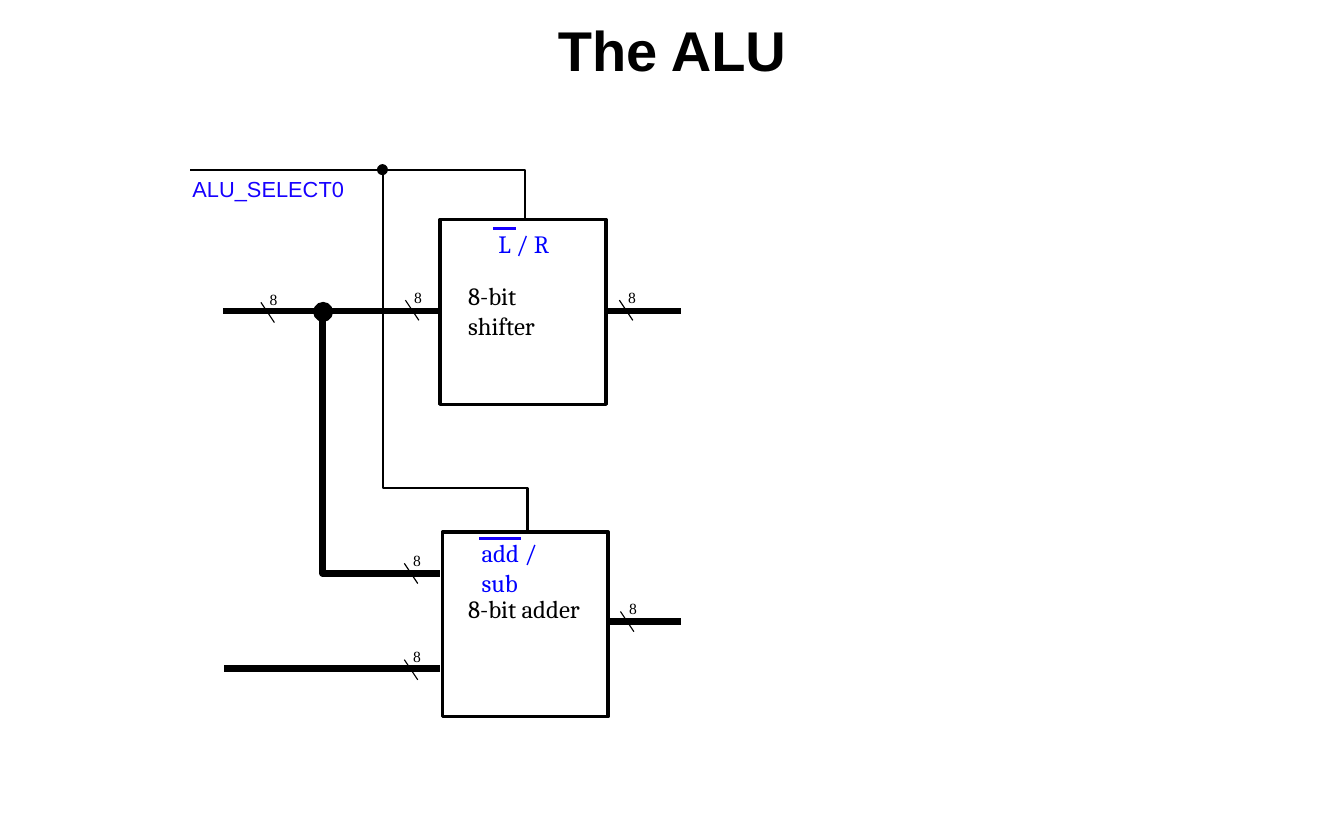
from typing import NamedTuple

from lxml import etree
from pptx import Presentation
from pptx import util as u
from pptx.dml.color import RGBColor
from pptx.enum import shapes, text
from pptx.oxml.ns import qn

BLACK, BLUE, BAR_BLUE = "000000", "0000FF", "1700FF"
Point = tuple[float, float]


class Block(NamedTuple):
    left: float
    top: float
    name: str
    control: str
    control_at: Point
    bar_left: float
    bar_top: float
    bar_width: float


class Wire(NamedTuple):
    points: list[Point]
    weight: float


class Dot(NamedTuple):
    left: float
    top: float
    size: float


BLOCK_W, BLOCK_H = 1.48, 1.65
BLOCKS = [
    Block(3.95, 4.75, "8-bit adder", "add / sub", (4.3, 4.8), 4.28, 4.81, 0.37),
    Block(3.93, 1.96, "8-bit shifter", "L / R", (4.45, 2.04), 4.4, 2.04, 0.21),
]
BUS, SIGNAL = 4, 1.5
WIRES = [
    Wire([(5.43, 5.55), (6.08, 5.55)], BUS),
    Wire([(5.42, 2.78), (6.08, 2.78)], BUS),
    Wire([(2, 5.97), (3.93, 5.97)], BUS),
    Wire([(2.88, 2.78), (2.88, 5.12), (3.93, 5.12)], BUS),
    Wire([(1.99, 2.78), (3.93, 2.78)], BUS),
    Wire([(4.71, 4.74), (4.71, 4.36), (3.42, 4.36), (3.42, 1.52)], SIGNAL),
    Wire([(4.69, 1.96), (4.69, 1.52), (1.7, 1.52)], SIGNAL),
]
BUS_WIDTH_MARKS = [(5.53, 2.68), (2.33, 2.7), (3.61, 5.03),
                   (3.61, 5.89), (3.62, 2.68), (5.54, 5.46)]
DOTS = [Dot(3.38, 1.48, 0.07), Dot(2.81, 2.71, 0.15)]


def rgb(color: str) -> RGBColor:
    return RGBColor.from_string(color)


def set_line(s, color: str, weight: float) -> None:
    s.line.color.rgb = rgb(color)
    s.line.width = u.Pt(weight)


def add_text(sp, at: Point, size: Point, content: str, font: str, points: float,
             color: str = BLACK, inset: Point = (0, 0), wrap: bool = True):
    """Add a one-paragraph text box; inset is (horizontal, vertical)."""
    s = sp.add_textbox(*map(u.Inches, (*at, *size)))
    tf = s.text_frame
    tf.word_wrap = wrap
    tf.vertical_anchor = text.MSO_ANCHOR.TOP
    tf.margin_left = tf.margin_right = u.Inches(inset[0])
    tf.margin_top = tf.margin_bottom = u.Inches(inset[1])
    tf.text = content
    p = tf.paragraphs[0]
    r = p.runs[0]
    r.font.name, r.font.size = font, u.Pt(points)
    r.font.color.rgb = rgb(color)
    return p


def add_line(sp, start: Point, end: Point, color: str, weight: float) -> None:
    s = sp.add_connector(shapes.MSO_CONNECTOR.STRAIGHT,
                         *map(u.Inches, (*start, *end)))
    set_line(s, color, weight)
    etree.SubElement(s._element.spPr, qn("a:effectLst"))


def add_wire(sp, wire: Wire) -> None:
    if len(wire.points) == 2:
        add_line(sp, *wire.points, BLACK, wire.weight)
        return
    first, *rest = [(u.Inches(x), u.Inches(y)) for x, y in wire.points]
    builder = sp.build_freeform(*first)
    builder.add_line_segments(rest, close=False)
    s = builder.convert_to_shape()
    s.shadow.inherit = False
    s.fill.background()
    set_line(s, BLACK, wire.weight)


def add_block(sp, block: Block) -> None:
    s = sp.add_shape(shapes.MSO_SHAPE.RECTANGLE,
                     *map(u.Inches, (block.left, block.top, BLOCK_W, BLOCK_H)))
    s.shadow.inherit = False
    s.fill.background()
    set_line(s, BLACK, 2.25)
    add_text(sp, (4.18, block.top + 0.55), (1.07, 0.27), block.name, "Cambria", 16)
    width = 0.81 if block.control == "add / sub" else 0.6
    add_text(sp, block.control_at, (width, 0.27), block.control, "Cambria", 16, BLUE)
    add_line(sp, (block.bar_left, block.bar_top),
             (block.bar_left + block.bar_width, block.bar_top), BAR_BLUE, 2)


def add_bus_width(sp, at: Point) -> None:
    """Slash a bus and label it with its width in bits."""
    x, y = at
    add_line(sp, at, (x + 0.12, y + 0.18), BLACK, 0.75)
    add_text(sp, (x - 0.02, y - 0.16), (0.27, 0.27), "8", "Times New Roman", 10,
             inset=(0.1, 0.05), wrap=False)


def add_dot(sp, dot: Dot) -> None:
    s = sp.add_shape(shapes.MSO_SHAPE.OVAL,
                     *map(u.Inches, (dot.left, dot.top, dot.size, dot.size)))
    s.shadow.inherit = False
    s.fill.solid()
    s.fill.fore_color.rgb = rgb(BLACK)
    set_line(s, BLACK, 2)


def main() -> None:
    prs = Presentation()
    prs.slide_width, prs.slide_height = u.Inches(12), u.Inches(7.5)
    sp = prs.slides.add_slide(prs.slide_layouts[6]).shapes

    title = add_text(sp, (1, -0.01), (10, 0.75), "The ALU", "Arial", 36,
                     inset=(0.1, 0.15))
    title.alignment = text.PP_ALIGN.CENTER
    title.runs[0].font.bold = True

    for block in BLOCKS:
        add_block(sp, block)
    for wire in WIRES:
        add_wire(sp, wire)
    add_text(sp, (1.62, 1.52), (1.57, 0.34), "ALU_SELECT0", "Arial", 14, BAR_BLUE,
             inset=(0.1, 0.05), wrap=False)
    for mark in BUS_WIDTH_MARKS:
        add_bus_width(sp, mark)
    for dot in DOTS:
        add_dot(sp, dot)

    prs.save("out.pptx")


if __name__ == "__main__":
    main()
